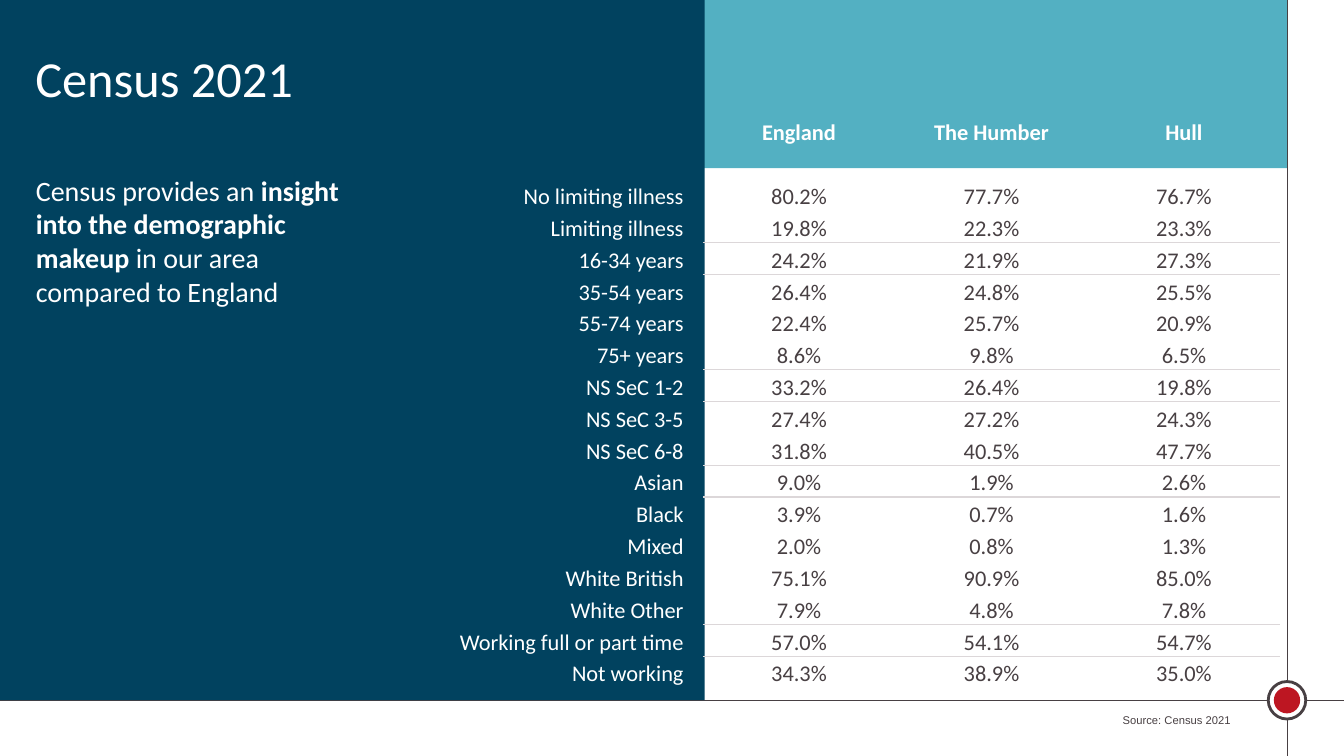
from lxml import etree
from pptx import Presentation
from pptx.dml.color import RGBColor
from pptx.enum.shapes import MSO_CONNECTOR, MSO_SHAPE
from pptx.enum.text import MSO_ANCHOR, MSO_AUTO_SIZE, PP_ALIGN
from pptx.oxml.ns import qn
from pptx.util import Pt

RECTANGLE, OVAL = MSO_SHAPE.RECTANGLE, MSO_SHAPE.OVAL
STRAIGHT = MSO_CONNECTOR.STRAIGHT
LEFT, CENTER, RIGHT = PP_ALIGN.LEFT, PP_ALIGN.CENTER, PP_ALIGN.RIGHT
TOP, MIDDLE, BOTTOM = MSO_ANCHOR.TOP, MSO_ANCHOR.MIDDLE, MSO_ANCHOR.BOTTOM

NAVY = RGBColor(0x01, 0x42, 0x5F)
TEAL = RGBColor(0x53, 0xB0, 0xC2)
RED = RGBColor(0xBD, 0x16, 0x22)
DARK = RGBColor(0x48, 0x40, 0x43)
PALE = RGBColor(0xDC, 0xD7, 0xD9)
WHITE = RGBColor(0xFF, 0xFF, 0xFF)
NO_TABLE_STYLE = "{2D5ABB26-0587-4C30-8999-92F81FD0307C}"

# Content
TITLE = "Census 2021"
INTRO = [("Census provides an ", False),
         ("insight into the demographic makeup ", True),
         ("in our area compared to England", False)]
SOURCE = "Source: Census 2021"
AREAS = ["England", "The Humber", "Hull"]
GROUPS = [
    [("No limiting illness", "80.2%", "77.7%", "76.7%"),
     ("Limiting illness", "19.8%", "22.3%", "23.3%")],
    [("16-34 years", "24.2%", "21.9%", "27.3%"),
     ("35-54 years", "26.4%", "24.8%", "25.5%"),
     ("55-74 years", "22.4%", "25.7%", "20.9%"),
     ("75+ years", "8.6%", "9.8%", "6.5%")],
    [("NS SeC 1-2", "33.2%", "26.4%", "19.8%"),
     ("NS SeC 3-5", "27.4%", "27.2%", "24.3%"),
     ("NS SeC 6-8", "31.8%", "40.5%", "47.7%")],
    [("Asian", "9.0%", "1.9%", "2.6%"),
     ("Black", "3.9%", "0.7%", "1.6%"),
     ("Mixed", "2.0%", "0.8%", "1.3%"),
     ("White British", "75.1%", "90.9%", "85.0%"),
     ("White Other", "7.9%", "4.8%", "7.8%")],
    [("Working full or part time", "57.0%", "54.1%", "54.7%"),
     ("Not working", "34.3%", "38.9%", "35.0%")],
]

# Layout, in points
SLIDE_W, SLIDE_H = 960, 540
RULE_X, RULE_Y = 919.3, 500.2
PANEL_W = 503.3
BAND_LEFT, BAND_H = 327, 120.2
TABLE_LEFT, TABLE_TOP = 306, 62.6
LABEL_W, VALUE_W = 196, 137.5
HEADER_H, ROW_H = 65.1, 22.75


def write(frame, runs, size=16, color=WHITE, font="Calibri", bold=False,
          align=LEFT, spacing=1.0):
    """Fill the first paragraph; runs is a string or (text, bold) pairs."""
    paragraph = frame.paragraphs[0]
    paragraph.alignment = align
    paragraph.line_spacing = spacing
    paragraph.space_before = Pt(0)
    for text, is_bold in [(runs, bold)] if isinstance(runs, str) else runs:
        run = paragraph.add_run()
        run.text = text
        run.font.name, run.font.size = font, Pt(size)
        run.font.bold = is_bold
        run.font.color.rgb = color


def place(shape, left, top, width, height):
    shape.left, shape.top = Pt(left), Pt(top)
    shape.width, shape.height = Pt(width), Pt(height)
    frame = shape.text_frame
    frame.word_wrap = True
    frame.auto_size = MSO_AUTO_SIZE.NONE
    frame.vertical_anchor = TOP
    return frame


def add_block(kind, left, top, width, height, fill, outline=None):
    block = slide.shapes.add_shape(kind, Pt(left), Pt(top), Pt(width), Pt(height))
    block.shadow.inherit = False
    block.fill.solid()
    block.fill.fore_color.rgb = fill
    if outline is None:
        block.line.fill.background()
    else:
        block.line.color.rgb = outline
        block.line.width = Pt(2)


def add_rule(x1, y1, x2, y2):
    rule = slide.shapes.add_connector(STRAIGHT, Pt(x1), Pt(y1), Pt(x2), Pt(y2))
    rule.line.color.rgb = DARK
    rule.line.width = Pt(0.5)
    etree.SubElement(rule._element.spPr, qn("a:effectLst"))


def set_border(cell, side):
    line = etree.Element(qn("a:" + side), w=str(Pt(1)))
    fill = etree.SubElement(line, qn("a:solidFill"))
    etree.SubElement(fill, qn("a:srgbClr"), val=str(PALE))
    cell._tc.get_or_add_tcPr().insert(0, line)


def fill_cell(cell, text, anchor=BOTTOM, margin_right=0, **style):
    cell.fill.background()
    cell.margin_left = cell.margin_top = cell.margin_bottom = 0
    cell.margin_right = Pt(margin_right)
    cell.vertical_anchor = anchor
    if text:
        write(cell.text_frame, text, **style)


prs = Presentation()
prs.slide_width, prs.slide_height = Pt(SLIDE_W), Pt(SLIDE_H)
slide = prs.slides.add_slide(prs.slide_layouts[1])

# Background bands, rules and the marker where the rules cross
add_block(RECTANGLE, BAND_LEFT, 0, RULE_X - BAND_LEFT, BAND_H, TEAL)
add_rule(RULE_X, 0, RULE_X, SLIDE_H)
add_rule(0, RULE_Y, SLIDE_W, RULE_Y)
for diameter, fill, outline in [(26.8, WHITE, DARK), (18.8, RED, None)]:
    add_block(OVAL, RULE_X - diameter / 2, RULE_Y - diameter / 2,
              diameter, diameter, fill, outline)
add_block(RECTANGLE, 0, 0, PANEL_W, RULE_Y, NAVY)

# Title and introduction, brought in front of the panel
title, intro = slide.placeholders
for placeholder in (title, intro):
    placeholder._element.getparent().append(placeholder._element)
write(place(title, 18, 35.3, 272, 53.3), TITLE, size=36, spacing=0.9)
intro_frame = place(intro, 18.4, 120.2, 243, 281.5)
intro_format = intro_frame.paragraphs[0]._p.get_or_add_pPr()
intro_format.set("marL", "0")
intro_format.set("indent", "0")
etree.SubElement(intro_format, qn("a:buNone"))
write(intro_frame, INTRO, size=20)

# Source line
source = slide.shapes.add_textbox(0, 0, 0, 0)
write(place(source, 450.7, 506.2, 435.6, 17.3), SOURCE, size=8, color=DARK,
      font="Arial", align=RIGHT)

# Census table
rows = [row for group in GROUPS for row in group]
census = slide.shapes.add_table(
    len(rows) + 1, len(AREAS) + 1, Pt(TABLE_LEFT), Pt(TABLE_TOP),
    Pt(LABEL_W + VALUE_W * len(AREAS)), Pt(HEADER_H + ROW_H * len(rows))).table
census.first_row = census.horz_banding = False
census._tbl.tblPr.find(qn("a:tableStyleId")).text = NO_TABLE_STYLE
for c, column in enumerate(census.columns):
    column.width = Pt(VALUE_W if c else LABEL_W)
for r, table_row in enumerate(census.rows):
    table_row.height = Pt(ROW_H if r else HEADER_H)

for c, area in enumerate([""] + AREAS):
    fill_cell(census.cell(0, c), area, anchor=MIDDLE, bold=True, align=CENTER)
for r, (label, *values) in enumerate(rows, start=1):
    fill_cell(census.cell(r, 0), label, margin_right=13.7, align=RIGHT)
    for c, value in enumerate(values, start=1):
        fill_cell(census.cell(r, c), value, color=DARK, align=CENTER)

# Thin line between neighbouring groups
last_row = 0
for group in GROUPS[:-1]:
    last_row += len(group)
    for c in range(1, len(AREAS) + 1):
        set_border(census.cell(last_row, c), "lnB")
        set_border(census.cell(last_row + 1, c), "lnT")

prs.save("out.pptx")
